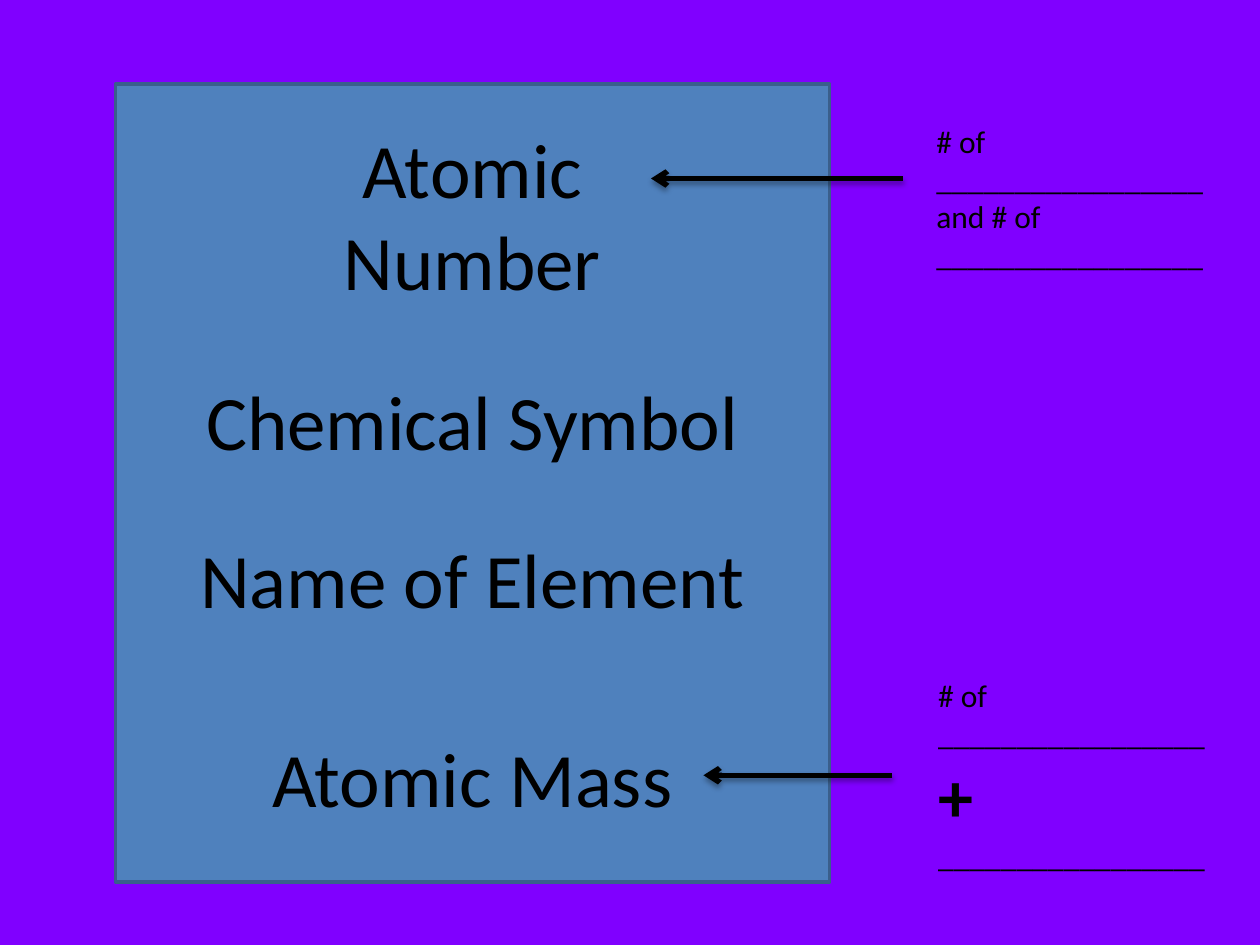
from dataclasses import dataclass

from lxml import etree
from pptx import Presentation
from pptx.dml.color import RGBColor
from pptx.enum.shapes import MSO_CONNECTOR, MSO_SHAPE
from pptx.enum.text import MSO_AUTO_SIZE, PP_ALIGN
from pptx.oxml.ns import qn
from pptx.util import Pt

RECTANGLE = MSO_SHAPE.RECTANGLE
STRAIGHT = MSO_CONNECTOR.STRAIGHT
FIT_SHAPE = MSO_AUTO_SIZE.SHAPE_TO_FIT_TEXT
LEFT, CENTER = PP_ALIGN.LEFT, PP_ALIGN.CENTER


@dataclass(frozen=True)
class Theme:
    background: str = "8000FF"
    tile: str = "4F81BD"
    tile_edge: str = "3A5F8C"
    ink: str = "000000"
    font: str = "Calibri"
    label: int = 44
    plus: int = 40
    note: int = 18


THEME = Theme()
BLANK_LINE = "_" * 17


def rgb(value):
    return RGBColor.from_string(value)


def add_text(slide, box, paragraphs, align):
    """Each paragraph is a list of (text, size, bold) runs."""
    frame = slide.shapes.add_textbox(*map(Pt, box)).text_frame
    frame.word_wrap = True
    frame.auto_size = FIT_SHAPE
    for index, runs in enumerate(paragraphs):
        paragraph = frame.add_paragraph() if index else frame.paragraphs[0]
        paragraph.alignment = align
        for text, size, bold in runs:
            run = paragraph.add_run()
            run.text = text
            run.font.color.rgb = rgb(THEME.ink)
            styles = {"name": THEME.font, "size": Pt(size), "bold": bold}
            for attribute, value in styles.items():
                setattr(run.font, attribute, value)


def add_arrow(slide, start, end, y):
    arrow = slide.shapes.add_connector(STRAIGHT, Pt(start), Pt(y), Pt(end), Pt(y))
    arrow.line.color.rgb = rgb(THEME.ink)
    arrow.line.width = Pt(3)
    etree.SubElement(arrow.line._get_or_add_ln(), qn("a:tailEnd"), type="arrow")
    # Soft shadow straight below the arrow
    effects = etree.SubElement(arrow._element.spPr, qn("a:effectLst"))
    shadow = etree.SubElement(
        effects, qn("a:outerShdw"), blurRad=str(Pt(3.1)), dist=str(Pt(1.8)),
        dir=str(90 * 60000), rotWithShape="0")
    color = etree.SubElement(shadow, qn("a:srgbClr"), val=THEME.ink)
    etree.SubElement(color, qn("a:alpha"), val="35000")


def add_element_tile(slide, box):
    left, top, width, height = box
    tile = slide.shapes.add_shape(RECTANGLE, *map(Pt, box))
    tile.shadow.inherit = False
    tile.fill.solid()
    tile.fill.fore_color.rgb = rgb(THEME.tile)
    tile.line.color.rgb = rgb(THEME.tile_edge)
    tile.line.width = Pt(2)

    # Labels centred in the tile: text, offset from top, width, height
    labels = [
        ("Atomic Number", 18, 192, 114),
        ("Chemical Symbol", 162, 354, 60.5),
        ("Name of Element", 252, 354, 60.5),
        ("Atomic Mass", 366, 354, 60.5),
    ]
    for text, offset, label_width, label_height in labels:
        label_left = left + (width - label_width) / 2
        add_text(slide, (label_left, top + offset, label_width, label_height),
                 [[(text, THEME.label, False)]], CENTER)


def add_number_note(slide, box):
    left, top, _, _ = box
    add_arrow(slide, left - 12, left - 156, top + 36)
    add_text(slide, box, [
        [(f"# of {BLANK_LINE} and # of", THEME.note, False)],
        [(BLANK_LINE, THEME.note, False)],
    ], LEFT)


def add_mass_note(slide, box):
    left, top, _, _ = box
    add_arrow(slide, left - 19, left - 127, top + 60)
    add_text(slide, box, [
        [(f"# of {BLANK_LINE} ", THEME.note, False), ("+", THEME.plus, True)],
        [(BLANK_LINE, THEME.note, False)],
    ], LEFT)


def main():
    presentation = Presentation()
    presentation.slide_width, presentation.slide_height = Pt(720), Pt(540)
    slide = presentation.slides.add_slide(presentation.slide_layouts[6])
    slide.background.fill.solid()
    slide.background.fill.fore_color.rgb = rgb(THEME.background)

    add_element_tile(slide, (66, 48, 408, 456))
    add_number_note(slide, (528, 66, 174, 94.5))
    add_mass_note(slide, (529, 383, 174, 121))
    presentation.save("out.pptx")


if __name__ == "__main__":
    main()
